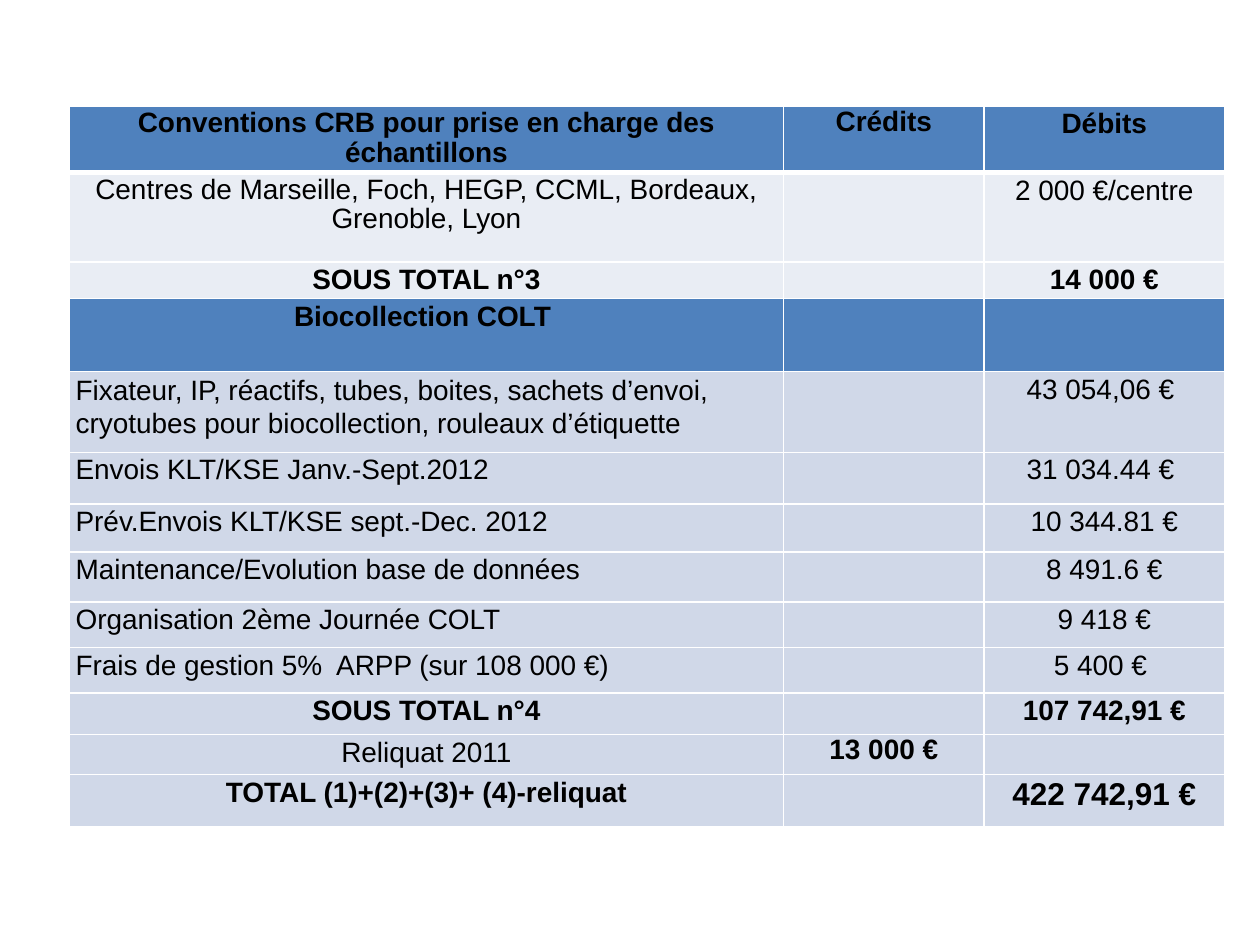
from dataclasses import dataclass

from lxml import etree
from pptx import Presentation
from pptx import util as u
from pptx.dml.color import RGBColor
from pptx.enum import text
from pptx.oxml import ns


@dataclass(frozen=True)
class Theme:
    font: str = "Arial"
    ink: str = "000000"
    border: str = "FFFFFF"
    heading: str = "4F81BD"
    light: str = "E9EDF4"
    band: str = "D0D8E8"
    body: int = 16
    total: int = 18
    thin: int = 1
    thick: int = 3


@dataclass(frozen=True)
class Entry:
    height: float
    label: str
    credit: str = ""
    debit: str = ""
    fill: str = Theme.band
    bold: bool = False
    centred: bool = False
    spacing: float = 1.0
    debit_size: int = Theme.body


THEME = Theme()
COLUMNS = (5.67, 1.59, 1.91)
ENTRIES = (
    Entry(0.53, "Conventions CRB pour prise en charge des échantillons", "Crédits", "Débits",
          fill=THEME.heading, bold=True, centred=True, spacing=0.96),
    Entry(0.71, "Centres de Marseille, Foch, HEGP, CCML, Bordeaux, Grenoble, Lyon",
          debit="2 000 €/centre", fill=THEME.light, centred=True, spacing=0.96),
    Entry(0.29, "SOUS TOTAL n°3", debit="14 000 €", fill=THEME.light, bold=True, centred=True),
    Entry(0.58, "Biocollection COLT ", fill=THEME.heading, bold=True, centred=True),
    Entry(0.64, "Fixateur, IP, réactifs, tubes, boites, sachets d’envoi, "
          "cryotubes pour biocollection, rouleaux d’étiquette",
          debit="43 054,06 € ", spacing=1.05),
    Entry(0.41, "Envois KLT/KSE Janv.-Sept.2012", debit="31 034.44 € "),
    Entry(0.38, "Prév.Envois KLT/KSE sept.-Dec. 2012", debit="10 344.81 €"),
    Entry(0.40, "Maintenance/Evolution base de données", debit="8 491.6 €"),
    Entry(0.36, "Organisation 2ème Journée COLT", debit="9 418 €"),
    Entry(0.36, "Frais de gestion 5%  ARPP (sur 108 000 €)", debit="5 400 € "),
    Entry(0.33, "SOUS TOTAL n°4", debit="107 742,91 €", bold=True, centred=True),
    Entry(0.32, "Reliquat 2011", credit="13 000 €", centred=True),
    Entry(0.41, "TOTAL (1)+(2)+(3)+ (4)-reliquat", debit="422 742,91 €",
          bold=True, centred=True, debit_size=THEME.total),
)


def draw_borders(cell, top, bottom):
    properties = cell._tc.get_or_add_tcPr()
    widths = {"L": THEME.thin, "R": THEME.thin, "T": top, "B": bottom}
    for side, width in widths.items():
        line = etree.SubElement(properties, ns.qn(f"a:ln{side}"), w=str(u.Pt(width)))
        solid = etree.SubElement(line, ns.qn("a:solidFill"))
        etree.SubElement(solid, ns.qn("a:srgbClr"), val=THEME.border)


def set_margins(cell, side, vertical):
    cell.margin_left = cell.margin_right = u.Inches(side)
    cell.margin_top = cell.margin_bottom = u.Inches(vertical)


def write_text(cell, words, size, bold, centred, spacing):
    paragraph = cell.text_frame.paragraphs[0]
    if not words:
        etree.SubElement(paragraph._p, ns.qn("a:endParaRPr"), sz=str(size * 100))
        return
    paragraph.alignment = text.PP_ALIGN.CENTER if centred else text.PP_ALIGN.LEFT
    if spacing != 1:
        paragraph.line_spacing = spacing
    run = paragraph.add_run()
    run.text = words
    run.font.name = THEME.font
    run.font.size = u.Pt(size)
    run.font.bold = bold
    run.font.color.rgb = RGBColor.from_string(THEME.ink)


def fill_row(budget, index, entry):
    budget.rows[index].height = u.Inches(entry.height)
    top = THEME.thick if index == 1 else THEME.thin
    bottom = THEME.thick if index == 0 else THEME.thin
    contents = (
        (entry.label, THEME.body, entry.bold, entry.centred, entry.spacing),
        (entry.credit, THEME.body, True, True, 1),
        (entry.debit, entry.debit_size, entry.bold, True, 1),
    )
    for column, content in enumerate(contents):
        cell = budget.cell(index, column)
        draw_borders(cell, top, bottom)
        cell.fill.solid()
        cell.fill.fore_color.rgb = RGBColor.from_string(entry.fill)
        if column == 1:
            set_margins(cell, 0, 0)
        else:
            set_margins(cell, 0.05, 0.02)
        write_text(cell, *content)


def add_budget(slide):
    height = sum(entry.height for entry in ENTRIES)
    frame = slide.shapes.add_table(
        len(ENTRIES), len(COLUMNS), u.Inches(0.55), u.Inches(0.84),
        u.Inches(sum(COLUMNS)), u.Inches(height))
    budget = frame.table
    budget.first_row = False
    budget.horz_banding = False
    for column, width in zip(budget.columns, COLUMNS):
        column.width = u.Inches(width)
    for index, entry in enumerate(ENTRIES):
        fill_row(budget, index, entry)


def main():
    presentation = Presentation()
    presentation.slide_width = u.Inches(10)
    presentation.slide_height = u.Inches(7.5)
    slide = presentation.slides.add_slide(presentation.slide_layouts[6])
    add_budget(slide)
    presentation.save("out.pptx")


if __name__ == "__main__":
    main()
